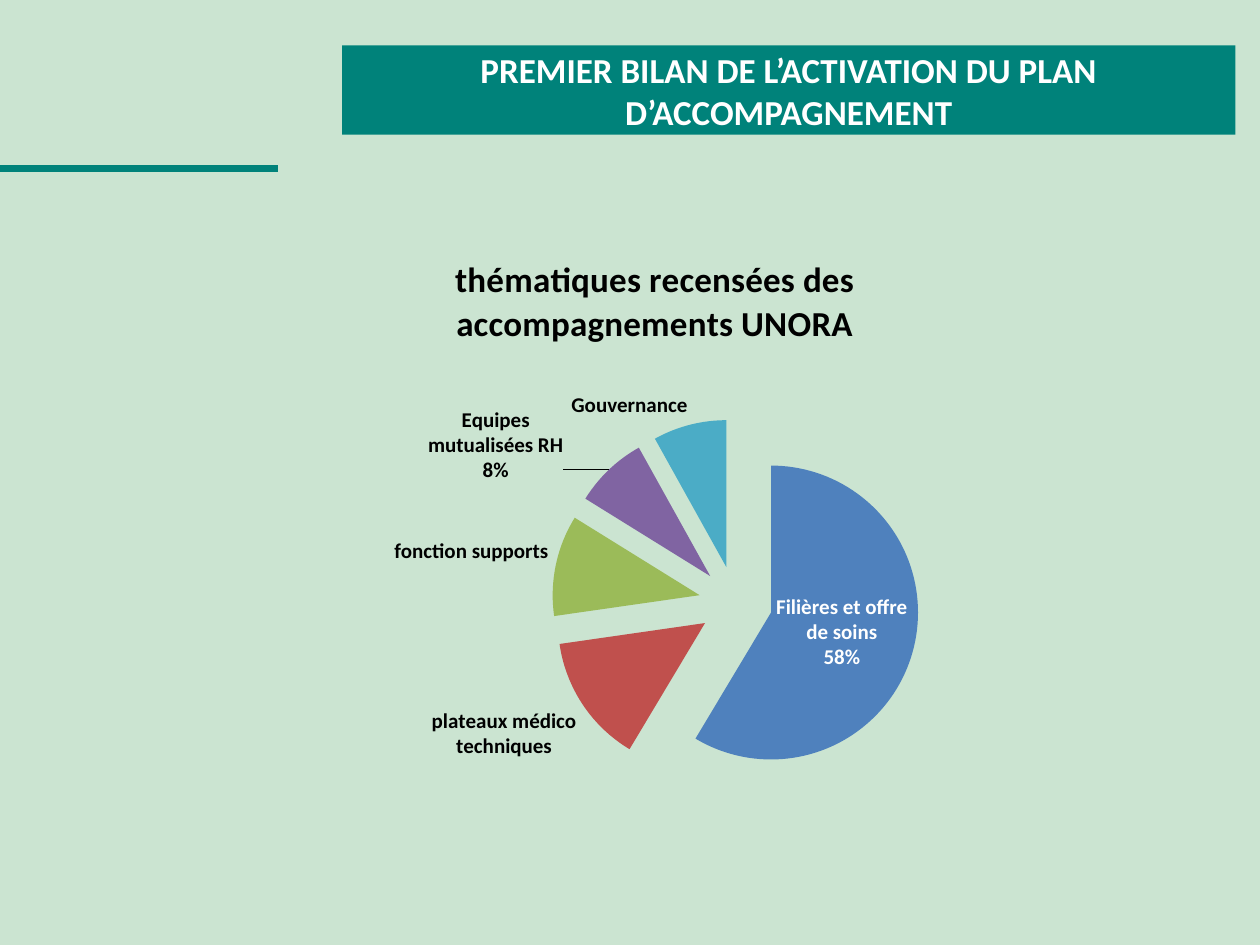
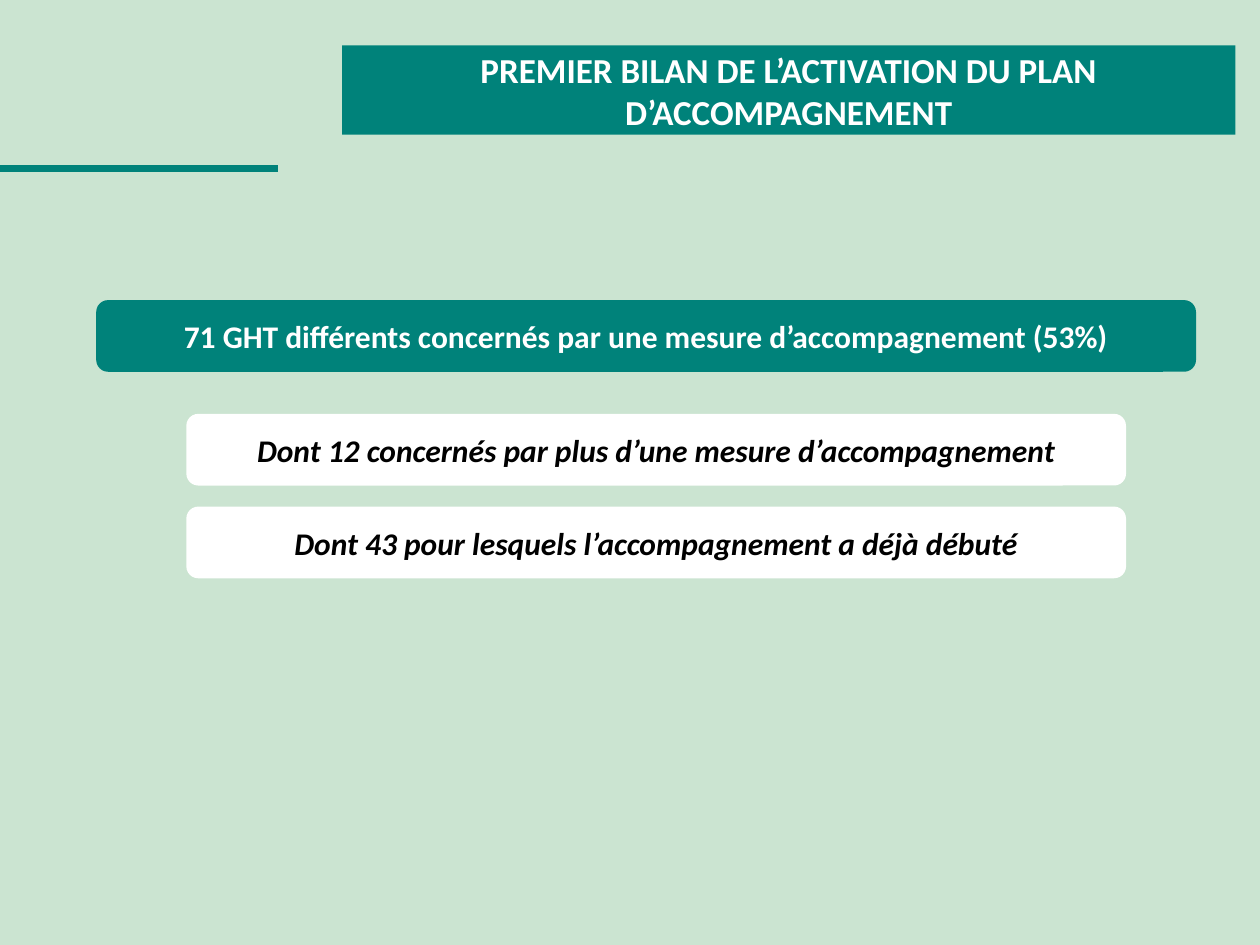
import pptx
import pptx.util
import pptx.oxml
import pptx.chart.data
import pptx.dml.color
import pptx.enum.chart
import pptx.enum.shapes
import pptx.enum.text
import lxml.etree

Pt = pptx.util.Pt
RGB = pptx.dml.color.RGBColor
Spot = pptx.enum.chart.XL_LABEL_POSITION
qn = pptx.oxml.ns.qn

TEAL = RGB(0x00, 0x82, 0x7A)
MINT = RGB(0xCB, 0xE4, 0xD1)
WHITE = RGB(0xFF, 0xFF, 0xFF)
BLACK = RGB(0x00, 0x00, 0x00)
BLUE = RGB(0x4F, 0x81, 0xBD)
RED = RGB(0xC0, 0x50, 0x4D)
GREEN = RGB(0x9B, 0xBB, 0x59)
PURPLE = RGB(0x80, 0x64, 0xA2)
AQUA = RGB(0x4B, 0xAC, 0xC6)
FONT = "Calibri"
TITLE = "PREMIER BILAN DE L’ACTIVATION DU PLAN D’ACCOMPAGNEMENT"


def write(frame, text, size=18, color=BLACK, italic=False):
    frame.text = text
    para = frame.paragraphs[0]
    para.alignment = pptx.enum.text.PP_ALIGN.CENTER
    font = para.runs[0].font
    font.name, font.size, font.bold, font.italic = FONT, Pt(size), True, italic
    font.color.rgb = color


def place(parent, tag, index, **attrs):
    """Insert a chart element that has no public setter."""
    node = lxml.etree.Element(qn("c:" + tag), attrs)
    parent.insert(index, node)
    return node


prs = pptx.Presentation()
prs.slide_width, prs.slide_height = Pt(720), Pt(540)
back = prs.slide_master.background.fill
back.solid()
back.fore_color.rgb = MINT

# Shared title band and rule
slides = []
for _ in range(2):
    slide = prs.slides.add_slide(prs.slide_layouts[5])
    slides.append(slide)
    band = slide.shapes.title
    band.left, band.top, band.width, band.height = Pt(195.5), Pt(26), Pt(510.5), Pt(51)
    band.fill.solid()
    band.fill.fore_color.rgb = TEAL
    band.text_frame.auto_size = pptx.enum.text.MSO_AUTO_SIZE.NONE
    band.text_frame.vertical_anchor = pptx.enum.text.MSO_ANCHOR.MIDDLE
    write(band.text_frame, TITLE, size=20, color=WHITE)

    rule = slide.shapes.add_connector(
        pptx.enum.shapes.MSO_CONNECTOR.STRAIGHT, Pt(0), Pt(96.25), Pt(158.75), Pt(96.25))
    rule.line.color.rgb = TEAL
    rule.line.width = Pt(4)
    lxml.etree.SubElement(rule._element.spPr, qn("a:effectLst"))

# Slide 1: pie of support themes
themes = [
    ("Filières et offre de soins", 58, BLUE),
    ("plateaux médico techniques", 14, RED),
    ("fonction supports", 11, GREEN),
    ("Equipes mutualisées RH", 8, PURPLE),
    ("Gouvernance", 8, AQUA),
]
data = pptx.chart.data.CategoryChartData()
data.categories = [name for name, _, _ in themes]
data.add_series("Thématiques", [share for _, share, _ in themes])
chart = slides[0].shapes.add_chart(
    pptx.enum.chart.XL_CHART_TYPE.PIE, Pt(143.5), Pt(131), Pt(461.5), Pt(350), data).chart
chart.font.name, chart.font.size = FONT, Pt(10)
chart.font.color.rgb = BLACK
chart.has_legend = False
chart.has_title = True
write(chart.chart_title.text_frame, "thématiques recensées des accompagnements UNORA", size=20)
chart.chart_title.include_in_layout = False

plot = chart.plots[0]
plot.vary_by_categories = True
pie = plot.series[0]
for num, (_, _, color) in enumerate(themes):
    fill = pie.points[num].format.fill
    fill.solid()
    fill.fore_color.rgb = color
first = pie._element.find(qn("c:dPt"))
place(pie._element, "explosion", pie._element.index(first), val="25")

# Inner label, one label pulled aside, and the rest outside
tags = pie.data_labels
inner = pie.points[0].data_label
aside = pie.points[3].data_label
for label, spot, color in [(tags, Spot.OUTSIDE_END, BLACK),
                           (inner, Spot.CENTER, WHITE),
                           (aside, Spot.OUTSIDE_END, BLACK)]:
    label.position = spot
    font = label.font
    font.name, font.size, font.bold = FONT, Pt(12), True
    font.color.rgb = color
tags.number_format = '0"%"'
tags.number_format_is_linked = False
root = pie._element
for item in root.iter(qn("c:dLbl")):
    place(item, "numFmt", 1, formatCode='0"%"', sourceLinked="0")
for flag in root.iter(qn("c:showCatName")):
    flag.set("val", "1")
for last in list(root.iter(qn("c:showBubbleSize"))):
    block = last.getparent()
    place(block, "separator", block.index(last) + 1).text = "\n"

# Fixed places, as fractions of the chart
moved = [item for item in root.iter(qn("c:dLbl")) if item.find(qn("c:idx")).get("val") == "3"][0]
area = chart._chartSpace.chart.plotArea
for old in area.findall(qn("c:layout")):
    area.remove(old)
for parent, index, rules in [
    (area, 0, dict(layoutTarget="inner", xMode="edge", yMode="edge",
                   x="0.37", y="0.31", w="0.46", h="0.6")),
    (moved, 1, dict(x="-0.05", y="0.03")),
]:
    layout = place(parent, "layout", index)
    manual = place(layout, "manualLayout", 0)
    for num, (key, val) in enumerate(rules.items()):
        place(manual, key, num, val=val)

# Slide 2: key figures
figures = [
    ("71 GHT différents concernés par une mesure d’accompagnement (53%)", 55, 171.5, 628.5, TEAL),
    ("Dont 12 concernés par plus d’une mesure d’accompagnement", 106.5, 236.5, 537, WHITE),
    ("Dont 43 pour lesquels l’accompagnement a déjà débuté", 106.5, 289.5, 537, WHITE),
]
for text, left, top, width, color in figures:
    box = slides[1].shapes.add_shape(
        pptx.enum.shapes.MSO_SHAPE.ROUNDED_RECTANGLE, Pt(left), Pt(top), Pt(width), Pt(41))
    box.shadow.inherit = False
    box.fill.solid()
    box.fill.fore_color.rgb = color
    box.line.fill.background()
    box.text_frame.word_wrap = True
    box.text_frame.vertical_anchor = pptx.enum.text.MSO_ANCHOR.MIDDLE
    main = color == TEAL
    write(box.text_frame, text, color=WHITE if main else BLACK, italic=not main)

prs.save("out.pptx")
